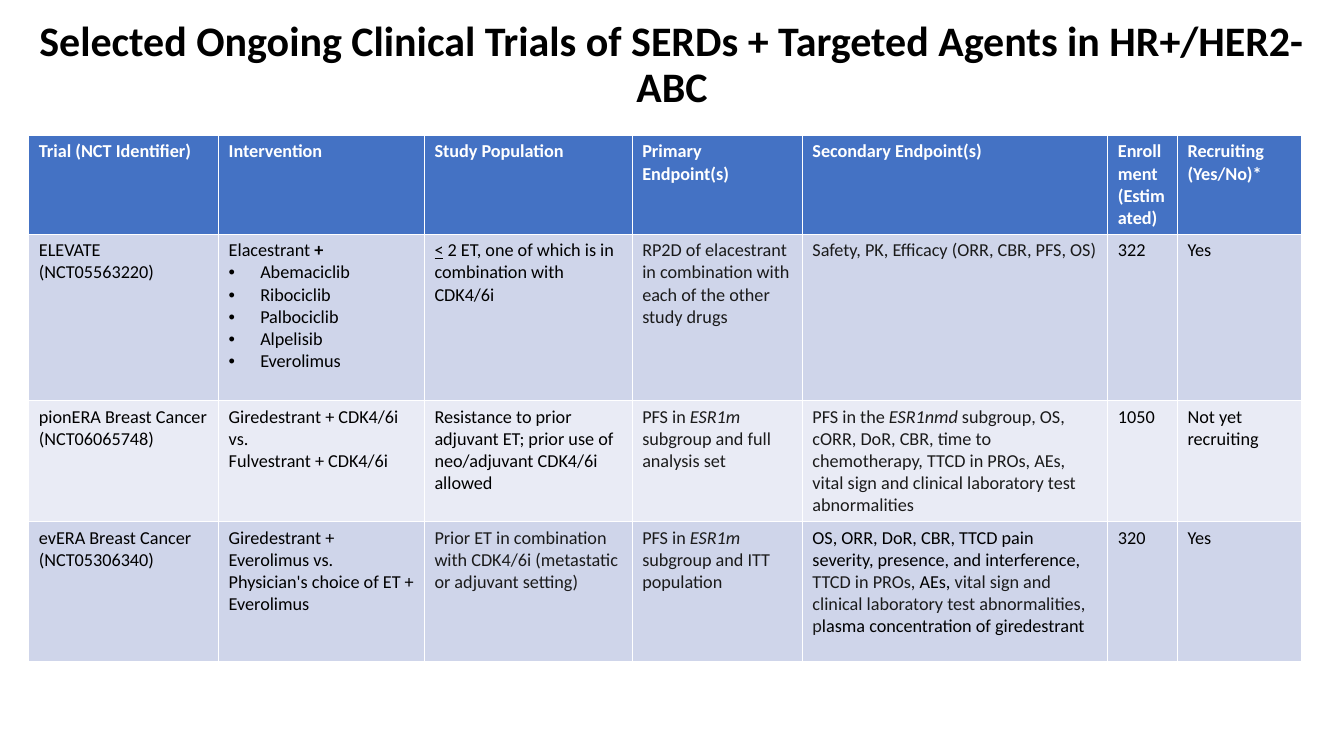
"""Build a slide tabulating ongoing clinical trials of SERDs with targeted agents."""
from lxml import etree
from pptx import Presentation
from pptx import util as u
from pptx.dml.color import RGBColor
from pptx.enum import text
from pptx.oxml.ns import qn

COLORS = {
    "black": "000000", "ink": "1B1B1B", "white": "FFFFFF",
    "header": "4472C4", "odd": "CFD5EA", "even": "E9EBF5",
}
FONT = "Calibri"
TITLE = "Selected Ongoing Clinical Trials of SERDs + Targeted Agents in HR+/HER2- ABC"
BULLET = "•"

HEADERS = ["Trial (NCT Identifier)", "Intervention", "Study Population", "Primary Endpoint(s)",
           "Secondary Endpoint(s)", "Enrollment (Estimated)", "Recruiting (Yes/No)*"]
PARTNERS = ["Abemaciclib", "Ribociclib", "Palbociclib", "Alpelisib", "Everolimus"]

# fmt: off
TRIALS = [
    [
        ["ELEVATE", "(NCT05563220)"],
        [[("Elacestrant\N{NO-BREAK SPACE}", ""), ("+", "bold")]]
        + [[(name, BULLET)] for name in PARTNERS],
        [[("<", "underline"), (" 2 ET, one of which is in combination with CDK4/6i", "")]],
        [[("RP2D of elacestrant in combination with each of the other study drugs", "ink")]],
        [[("Safety, PK, Efficacy (ORR, CBR, PFS, OS)", "ink")]],
        ["322"],
        ["Yes"],
    ],
    [
        ["pionERA Breast Cancer", "(NCT06065748)"],
        ["Giredestrant + CDK4/6i vs.", "Fulvestrant + CDK4/6i"],
        ["Resistance to prior adjuvant ET; prior use of neo/adjuvant CDK4/6i allowed"],
        [[("PFS in ", "ink"), ("ESR1m", "ink italic"),
          (" subgroup and full analysis set", "ink")]],
        [[("PFS in the ", "ink"), ("ESR1nmd", "ink italic"),
          (" subgroup, OS, cORR, DoR, CBR, time to chemotherapy, TTCD in PROs, AEs, "
           "vital sign and clinical laboratory test abnormalities", "ink")]],
        ["1050"],
        ["Not yet recruiting"],
    ],
    [
        ["evERA Breast Cancer (NCT05306340)"],
        ["Giredestrant + Everolimus vs. Physician's choice of ET + Everolimus"],
        [[("Prior ET in combination with CDK4/6i (metastatic or adjuvant setting)", "ink")]],
        [[("PFS in ", "ink"), ("ESR1m", "ink italic"), (" subgroup and ITT population", "ink")]],
        [[("OS, ORR, DoR, CBR, TTCD pain severity, presence, and interference, ", ""),
          ("TTCD in PROs, ", "ink"), ("AEs, ", ""),
          ("vital sign and clinical laboratory test abnormalities, p", "ink"),
          ("lasma concentration of giredestrant", "")]],
        ["320"],
        ["Yes"],
    ],
]
# fmt: on

SLIDE_SIZE = (960, 540)
TITLE_BOX = (0, -5, 960, 104.4)
TABLE_AT = (20.6, 96.8)
COLUMN_WIDTHS = [135.6, 147, 148.4, 121.6, 218.2, 49.8, 88.6]
ROW_HEIGHTS = [70, 118.8, 86, 100]
BULLET_INDENT = 22.5


def add_span(para, words, size, style="", color="black"):
    span = para.add_run()
    span.text = words
    flags = style.split()
    span.font.name = FONT
    span.font.size = u.Pt(size)
    span.font.bold = "bold" in flags
    span.font.italic = "italic" in flags
    span.font.underline = "underline" in flags
    span.font.color.rgb = RGBColor.from_string(COLORS["ink" if "ink" in flags else color])


def add_bullet(para):
    props = para._p.get_or_add_pPr()
    props.set("marL", str(u.Pt(BULLET_INDENT)))
    props.set("indent", str(-u.Pt(BULLET_INDENT)))
    etree.SubElement(props, qn("a:buFont")).set("typeface", "Arial")
    etree.SubElement(props, qn("a:buChar")).set("char", BULLET)


def fill_cell(cell, paragraphs, fill, style="", color="black"):
    cell.fill.solid()
    cell.fill.fore_color.rgb = RGBColor.from_string(COLORS[fill])
    frame = cell.text_frame
    for index, content in enumerate(paragraphs):
        para = frame.add_paragraph() if index else frame.paragraphs[0]
        spans = [(content, style)] if isinstance(content, str) else content
        if spans[0][1] == BULLET:
            add_bullet(para)
        for words, flags in spans:
            add_span(para, words, 13, flags, color)


def add_title(page):
    title = page.shapes.title
    title.left, title.top, title.width, title.height = map(u.Pt, TITLE_BOX)
    frame = title.text_frame
    frame.word_wrap = True
    frame.auto_size = text.MSO_AUTO_SIZE.NONE
    frame.vertical_anchor = text.MSO_ANCHOR.MIDDLE
    para = frame.paragraphs[0]
    para.alignment = text.PP_ALIGN.CENTER
    para.line_spacing = 0.9
    add_span(para, TITLE, 30, "bold")


def add_trials(page):
    extent = (sum(COLUMN_WIDTHS), sum(ROW_HEIGHTS))
    table = page.shapes.add_table(len(ROW_HEIGHTS), len(COLUMN_WIDTHS),
                                  *map(u.Pt, TABLE_AT + extent)).table
    for column, width in zip(table.columns, COLUMN_WIDTHS):
        column.width = u.Pt(width)
    for row, height in zip(table.rows, ROW_HEIGHTS):
        row.height = u.Pt(height)
    for column, label in enumerate(HEADERS):
        fill_cell(table.cell(0, column), [label], "header", "bold", "white")
    for row, trial in enumerate(TRIALS, 1):
        for column, paragraphs in enumerate(trial):
            fill_cell(table.cell(row, column), paragraphs, "odd" if row % 2 else "even")


def main():
    deck = Presentation()
    deck.slide_width, deck.slide_height = map(u.Pt, SLIDE_SIZE)
    page = deck.slides.add_slide(deck.slide_layouts.get_by_name("Title Only"))
    add_title(page)
    add_trials(page)
    deck.save("out.pptx")


if __name__ == "__main__":
    main()
